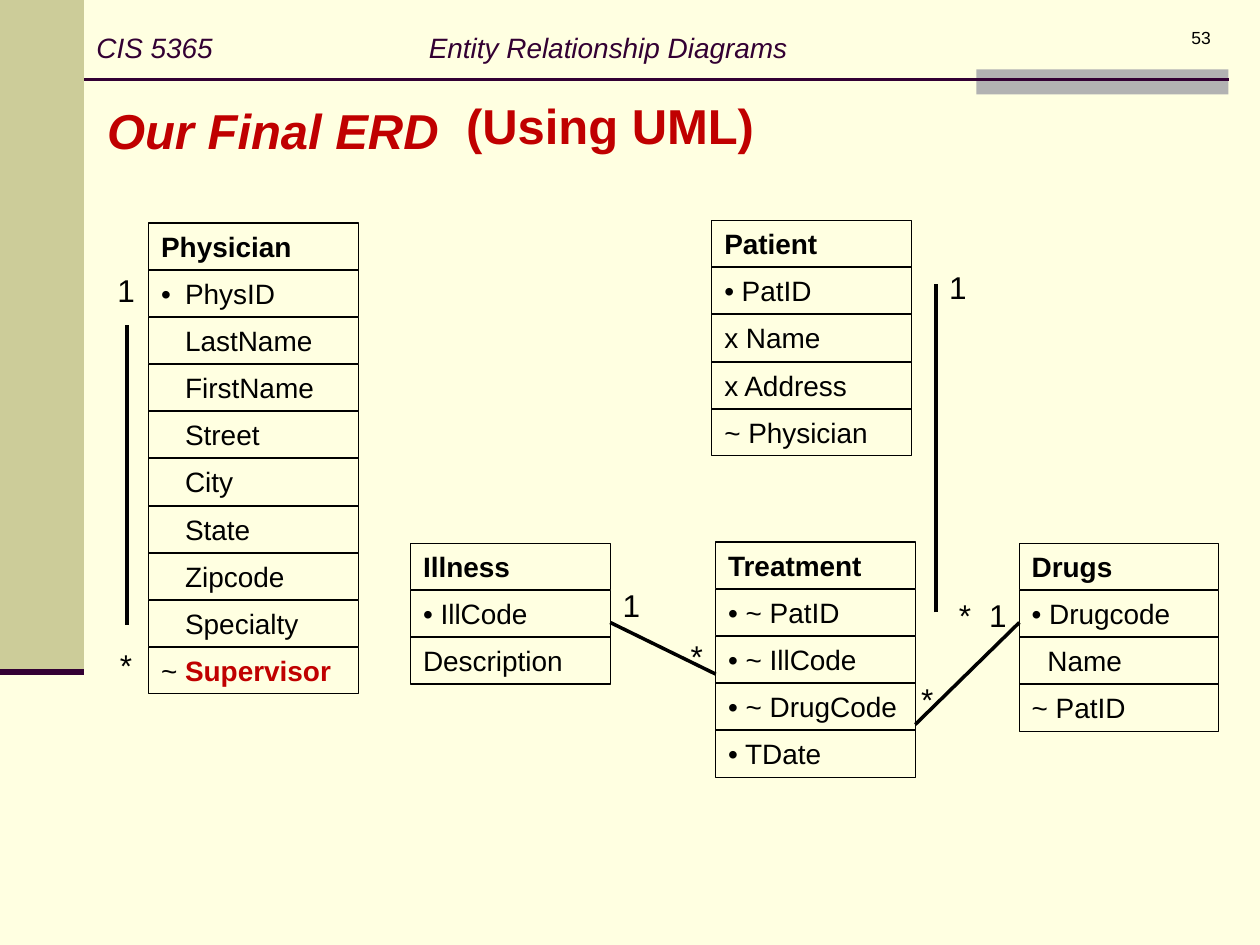
from lxml.etree import SubElement
from pptx import Presentation
from pptx.dml.color import RGBColor
from pptx.enum.shapes import MSO_CONNECTOR, MSO_SHAPE
from pptx.enum.text import MSO_ANCHOR, MSO_AUTO_SIZE, PP_ALIGN
from pptx.oxml.ns import qn
from pptx.util import Pt

FONT = "Arial"
COLORS = {
    "background": "FFFFE1",
    "sidebar": "CCCC99",
    "accent": "B2B2B2",
    "plum": "330033",
    "red": "C00000",
    "black": "000000",
}
ROW_PITCH = 26.95
ROW_HEIGHT = 26.6

# Each entity: name, left, top, width, tab stop, attributes
ENTITIES = [
    ("Physician", 85, 127.4, 120, 13.7,
     ["• \tPhysID", "\tLastName", "\tFirstName", "\tStreet", "\tCity",
      "\tState", "\tZipcode", "\tSpecialty", "~\tSupervisor"]),
    ("Patient", 406.8, 126, 114, 9,
     ["• PatID", "x Name", "x Address", "~ Physician"]),
    ("Illness", 234.7, 310.5, 114, 9, ["• IllCode", "Description"]),
    ("Drugs", 582.5, 310.5, 114, 9, ["• Drugcode", "\tName", "~ PatID"]),
    ("Treatment", 409, 309.8, 114, 9,
     ["• ~ PatID", "• ~ IllCode", "• ~ DrugCode", "• TDate"]),
]
HIGHLIGHTED = "Supervisor"

# Each label: symbol, centre x, top
CARDINALITIES = [
    ("1", 72, 151.2), ("*", 72, 365.8),
    ("1", 360.7, 331.2), ("*", 398.2, 360.7),
    ("*", 529.9, 385.2), ("1", 570.2, 337),
    ("1", 547.2, 149.8), ("*", 551.5, 337),
]

# Each relationship: x and y of both ends
RELATIONSHIPS = [
    (72.7, 357.1, 72.7, 185.8),
    (535, 349.9, 535, 162),
    (409, 385.2, 348.7, 355.7),
    (523, 414, 582.5, 355.7),
]


def color(name):
    return RGBColor.from_string(COLORS[name])


def add_run(paragraph, text, size, color_name="black", bold=False, italic=False):
    run = paragraph.add_run()
    run.text = text
    font = run.font
    font.name, font.size = FONT, Pt(size)
    font.bold, font.italic = bold, italic
    font.color.rgb = color(color_name)


def add_tab_stop(paragraph, position):
    tab_list = SubElement(paragraph._p.get_or_add_pPr(), qn("a:tabLst"))
    SubElement(tab_list, qn("a:tab"), pos=str(int(Pt(position))), algn="l")


def add_text_box(slide, left, top, width, height, align=PP_ALIGN.LEFT, wrap=True):
    """Add an empty text box and return its text frame."""
    shape = slide.shapes.add_textbox(Pt(left), Pt(top), Pt(width), Pt(height))
    frame = shape.text_frame
    frame.word_wrap = wrap
    frame.paragraphs[0].alignment = align
    return frame


def add_rectangle(slide, left, top, width, height, fill=None):
    """Add a filled block without outline, or an outlined box without fill."""
    shape = slide.shapes.add_shape(
        MSO_SHAPE.RECTANGLE, Pt(left), Pt(top), Pt(width), Pt(height))
    shape.shadow.inherit = False
    if fill:
        shape.fill.solid()
        shape.fill.fore_color.rgb = color(fill)
        shape.line.fill.background()
    else:
        shape.fill.background()
        shape.line.color.rgb = color("black")
        shape.line.width = Pt(0.75)
    return shape


def add_line(slide, x1, y1, x2, y2, color_name="black", width=2):
    line = slide.shapes.add_connector(
        MSO_CONNECTOR.STRAIGHT, Pt(x1), Pt(y1), Pt(x2), Pt(y2))
    line.line.color.rgb = color(color_name)
    line.line.width = Pt(width)
    SubElement(line._element.spPr, qn("a:effectLst"))


def add_frame(slide):
    """Add the sidebar, rules, running header and page number."""
    add_rectangle(slide, 0, 0, 48, 384, "sidebar")
    add_rectangle(slide, 558, 39.6, 144, 14.4, "accent")
    add_line(slide, 48, 45.4, 702, 45.4, "plum", 1.5)
    add_line(slide, 0, 384, 48, 384, "plum", 3.5)

    header = add_text_box(slide, 48, -18, 660, 90)
    header.vertical_anchor = MSO_ANCHOR.MIDDLE
    add_tab_stop(header.paragraphs[0], 190)
    add_run(header.paragraphs[0], "CIS 5365\tEntity Relationship Diagrams",
            16, "plum", italic=True)

    number = add_text_box(slide, 549, 12.2, 150, 36, PP_ALIGN.RIGHT)
    add_run(number.paragraphs[0], "53", 10)


def add_title(slide):
    title = slide.shapes.title
    title.left, title.top, title.width, title.height = Pt(54), Pt(54), Pt(226), Pt(41)
    frame = title.text_frame
    frame.auto_size = MSO_AUTO_SIZE.NONE
    frame.vertical_anchor = MSO_ANCHOR.TOP
    frame.paragraphs[0].alignment = PP_ALIGN.LEFT
    add_run(frame.paragraphs[0], "Our Final ERD", 28, "red", bold=True, italic=True)

    notation = add_text_box(slide, 259.2, 54.7, 181.4, 37.4, wrap=False)
    notation.margin_top = 0
    add_run(notation.paragraphs[0], "(Using UML)", 28, "red", bold=True)


def add_entity(slide, name, left, top, width, tab_stop, attributes):
    """Stack one box for the entity name and one for each attribute."""
    for index, text in enumerate([name, *attributes]):
        box = add_rectangle(slide, left, top + index * ROW_PITCH, width, ROW_HEIGHT)
        frame = box.text_frame
        frame.word_wrap = True
        frame.vertical_anchor = MSO_ANCHOR.TOP
        frame.margin_right = Pt(3.6)
        paragraph = frame.paragraphs[0]
        paragraph.alignment = PP_ALIGN.LEFT
        if "\t" in text:
            add_tab_stop(paragraph, tab_stop)
        if text.endswith(HIGHLIGHTED):
            add_run(paragraph, text.removesuffix(HIGHLIGHTED), 16)
            add_run(paragraph, HIGHLIGHTED, 16, "red", bold=True)
        else:
            add_run(paragraph, text, 16, bold=index == 0)


def add_cardinality(slide, symbol, center, top):
    width = 24
    frame = add_text_box(slide, center - width / 2, top, width, 28.8,
                         PP_ALIGN.CENTER, wrap=False)
    add_run(frame.paragraphs[0], symbol, 18)


def main():
    presentation = Presentation()
    presentation.slide_width, presentation.slide_height = Pt(720), Pt(540)
    title_only = presentation.slide_layouts[5]
    slide = presentation.slides.add_slide(title_only)
    slide.background.fill.solid()
    slide.background.fill.fore_color.rgb = color("background")

    add_frame(slide)
    add_title(slide)
    for entity in ENTITIES:
        add_entity(slide, *entity)
    for cardinality in CARDINALITIES:
        add_cardinality(slide, *cardinality)
    for relationship in RELATIONSHIPS:
        add_line(slide, *relationship)
    presentation.save("out.pptx")


if __name__ == "__main__":
    main()
